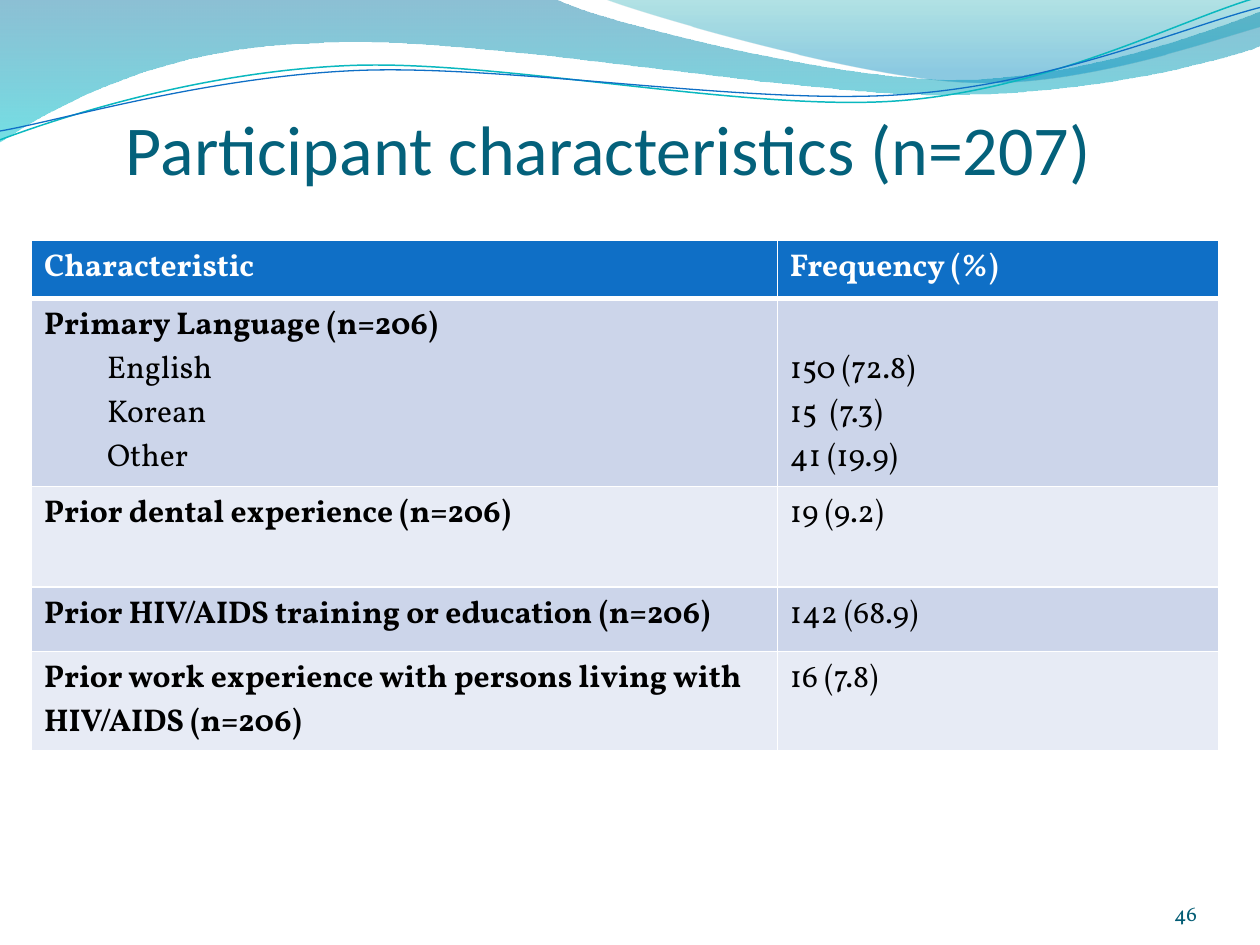
"""Builds the participant characteristics slide with its wave header and frequency table."""
import math

import pptx
import pptx.dml.color
import pptx.enum.text
import pptx.oxml
import pptx.oxml.ns
import pptx.util

COLORS = {
    "white": "FFFFFF", "black": "000000", "title": "04617B", "number": "045D75",
    "header": "0F6FC6", "band_dark": "CCD5EA", "band_light": "E7EBF5", "teal": "0AB8BF",
    "deep_blue": "0074A1", "cyan": "00C6CF", "green": "00A1A9", "sky": "008BBF",
}
COLUMNS = 10
HEADING_FONT, BODY_FONT = "Calibri", "Vollkorn"
ALIGN = pptx.enum.text.PP_ALIGN
BOTTOM = pptx.enum.text.MSO_ANCHOR.BOTTOM
qn = pptx.oxml.ns.qn


class SlideBuilder:
    def __init__(self, deck):
        self.slide = deck.slides.add_slide(deck.slide_layouts[6])
        self.unit = deck.slide_width / COLUMNS

    def grid(self, *lengths):
        return [pptx.util.Emu(round(length * self.unit)) for length in lengths]

    def color(self, name):
        return pptx.dml.color.RGBColor.from_string(COLORS[name])

    def style(self, paragraph, size, font, color, bold=False):
        for run in paragraph.runs:
            run.font.size = pptx.util.Pt(size)
            run.font.name = font
            run.font.bold = bold
            run.font.color.rgb = self.color(color)

    def text(self, words, box, size, font, color, align=ALIGN.LEFT, top_inset=0):
        frame = self.slide.shapes.add_textbox(*self.grid(*box)).text_frame
        frame.word_wrap = True
        frame.vertical_anchor = BOTTOM
        frame.margin_left = frame.margin_right = frame.margin_bottom = 0
        frame.margin_top, = self.grid(top_inset)
        frame.text = words
        frame.paragraphs[0].alignment = align
        self.style(frame.paragraphs[0], size, font, color)

    def curve(self, start, segments, closed):
        points = [segment[i:i + 2] for segment in segments for i in range(0, len(segment), 2)]
        pen = self.slide.shapes.build_freeform(*self.grid(*start))
        pen.add_line_segments([self.grid(*point) for point in points], close=closed)
        shape = pen.convert_to_shape()
        shape.shadow.inherit = False
        lines = iter(list(shape._element.spPr.iter(qn("a:lnTo"))))
        for segment in segments:
            first = next(lines)
            if len(segment) == 6:
                bezier = first.makeelement(qn("a:cubicBezTo"), {})
                first.addprevious(bezier)
                for line in (first, next(lines), next(lines)):
                    bezier.append(line[0])
                    line.getparent().remove(line)
        return shape

    def wave(self, start, segments, stops):
        shape = self.curve(start, segments, True)
        shape.line.fill.background()
        shape.fill.gradient()
        shape.fill.gradient_angle = 270
        for stop, (position, color, _) in zip(shape.fill.gradient_stops, stops):
            stop.position = position
            stop.color.rgb = self.color(color)
        tints = list(shape._element.spPr.iter(qn("a:srgbClr")))
        for tint, (_, _, opacity) in zip(tints, stops):
            tint.append(tint.makeelement(qn("a:alpha"), {"val": str(round(opacity * 100000))}))

    def strand(self, start, segments, color, width, center, tilt=-2.7):
        cos, sin = math.cos(math.radians(-tilt)), math.sin(math.radians(-tilt))

        def level(points):
            flat = []
            for x, y in zip(points[::2], points[1::2]):
                across, down = x - center[0], y - center[1]
                flat += [center[0] + across * cos - down * sin,
                         center[1] + across * sin + down * cos]
            return flat

        shape = self.curve(level(start), [level(segment) for segment in segments], False)
        shape.rotation = tilt
        shape.fill.background()
        shape.line.color.rgb = self.color(color)
        shape.line.width = pptx.util.Pt(width)

    def borders(self, cell, **widths):
        properties = cell._tc.get_or_add_tcPr()
        for place, side in enumerate("LRTB"):
            width = pptx.util.Pt(widths.get(side, 1))
            properties.insert(place, pptx.oxml.parse_xml(
                f'<a:ln{side} {pptx.oxml.ns.nsdecls("a")} w="{width}"><a:solidFill>'
                f'<a:srgbClr val="{COLORS["white"]}"/></a:solidFill></a:ln{side}>'))

    def cell(self, cell, lines, fill, color, bold):
        cell.fill.solid()
        cell.fill.fore_color.rgb = self.color(fill)
        cell.text_frame.text = "\n".join(lines)
        for paragraph in cell.text_frame.paragraphs:
            self.style(paragraph, 18, BODY_FONT, color, bold)

    def sublevels(self, cell):
        indent, = self.grid(0.5)
        for paragraph in cell.text_frame.paragraphs[1:]:
            paragraph.level = 1
            properties = paragraph._p.get_or_add_pPr()
            properties.set("marL", str(indent))
            properties.set("indent", "0")
            self.style(paragraph, 18, BODY_FONT, "black")

    def table(self, left, top, widths, heights, records):
        box = self.grid(left, top, sum(widths), sum(heights))
        table = self.slide.shapes.add_table(len(heights), len(widths), *box).table
        for column, width in zip(table.columns, self.grid(*widths)):
            column.width = width
        for row, height in zip(table.rows, self.grid(*heights)):
            row.height = height
        for index, record in enumerate(records):
            header = index == 0
            fill = "header" if header else "band_dark" if index % 2 else "band_light"
            for column, lines in enumerate(record):
                cell = table.cell(index, column)
                self.cell(cell, lines, fill, "white" if header else "black",
                          header or column == 0)
                self.borders(cell, T=3 if index == 1 else 1, B=3 if header else 1)
            label, value = table.cell(index, 0), table.cell(index, 1)
            self.sublevels(label)
            if len(record[0]) > len(record[1]):
                value.margin_top, = self.grid(0.4)


def main():
    deck = pptx.Presentation()
    deck.slide_width, deck.slide_height = pptx.util.Inches(10), pptx.util.Inches(7.5)
    page = SlideBuilder(deck)

    page.wave((0, 0), [
        (4.4, -0.01), (4.76, 0.17, 6.64, 0.63, 7.58, 0.63), (8.53, 0.63, 9.58, 0.26, 10, 0.09),
        (10.01, 0.36), (9.83, 0.44, 8.7, 0.76, 7.46, 0.75), (6.22, 0.75, 3.82, 0.28, 2.57, 0.34),
        (1.29, 0.36, 0.46, 0.83, -0.01, 1.13), (0, 0),
    ], [(0, "deep_blue", 0.45), (1, "cyan", 0.55)])
    page.wave((4.79, -0.01), [
        (5.09, 0.11, 6.82, 0.62, 7.69, 0.65), (8.56, 0.69, 9.61, 0.32, 10, 0.21), (10, 0),
        (4.79, -0.01),
    ], [(0, "green", 0.3), (0.8, "sky", 0.45)])
    page.strand((0, 1.11), [
        (0.48, 0.93, 1.58, 0.57, 2.77, 0.52), (3.95, 0.47, 5.93, 0.89, 7.13, 0.8),
        (8.33, 0.71, 9.38, 0.15, 9.98, -0.02),
    ], "teal", 0.85, center=(4.99, 0.58))
    page.strand((0, 1.04), [
        (0.47, 0.96, 1.64, 0.61, 2.83, 0.56), (4.03, 0.51, 5.97, 0.84, 7.17, 0.75),
        (8.36, 0.67, 9.41, 0.21, 10, 0.06),
    ], "header", 0.75, center=(5, 0.59))

    page.text("Participant characteristics (n=207)", (1, 0.25, 9, 1.25), 40, HEADING_FONT,
              "title", top_inset=0.05)
    page.table(0.25, 1.91, (5.92, 3.5), (0.46, 1.49, 0.8, 0.51, 0.79), [
        (["Characteristic"], ["Frequency (%)"]),
        (["Primary Language (n=206)", "English", "Korean", "Other"],
         ["150 (72.8)", "15  (7.3)", "41 (19.9)"]),
        (["Prior dental experience (n=206)"], ["19 (9.2)"]),
        (["Prior HIV/AIDS training or education (n=206)"], ["142 (68.9)"]),
        (["Prior work experience with persons living with HIV/AIDS (n=206)"], ["16 (7.8)"]),
    ])
    page.text("46", (8.67, 6.95, 0.83, 0.4), 12, BODY_FONT, "number", ALIGN.RIGHT)
    deck.save("out.pptx")


if __name__ == "__main__":
    main()
